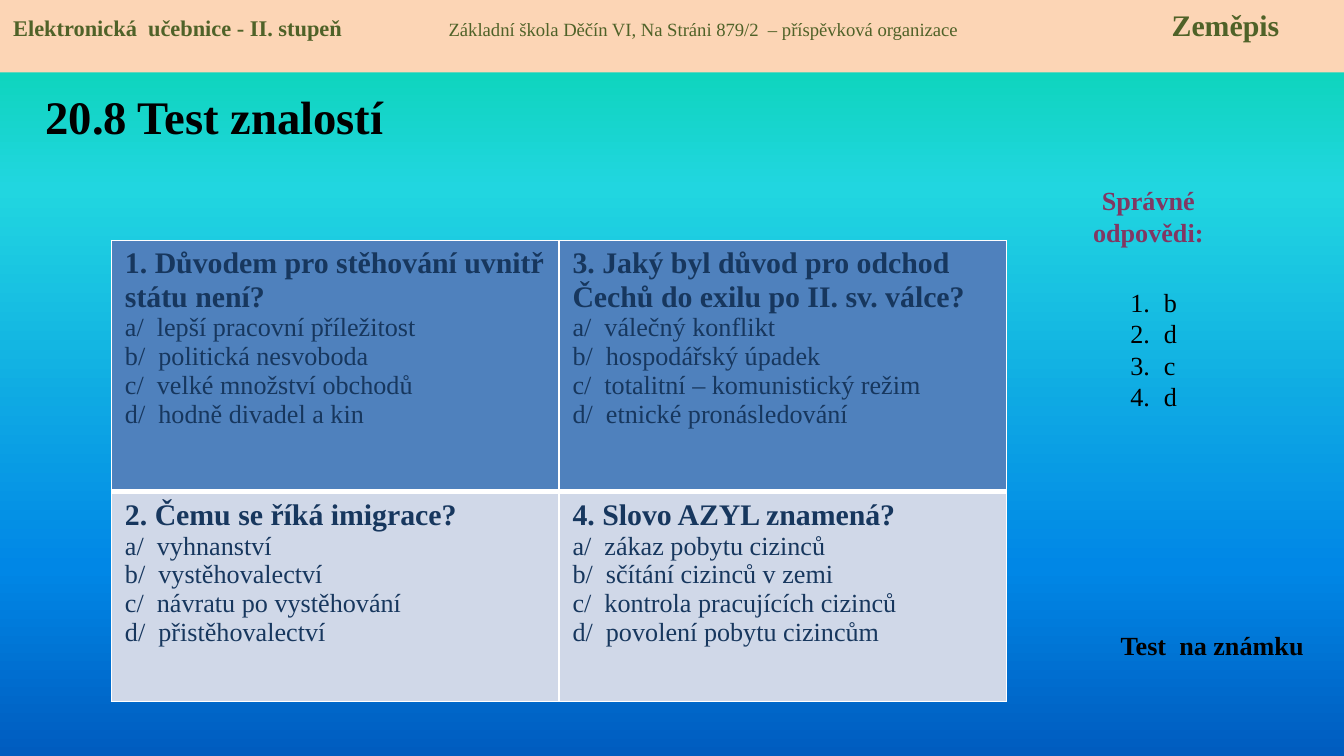
"""Build the geography quiz slide with its answer key."""
import dataclasses
import typing

import lxml.etree
import pptx
import pptx.dml.color
import pptx.enum.shapes
import pptx.enum.text
import pptx.oxml.ns
import pptx.util

Inches = pptx.util.Inches
Pt = pptx.util.Pt
ALIGN = pptx.enum.text.PP_ALIGN
ANCHOR = pptx.enum.text.MSO_ANCHOR
FACE = "Times New Roman"
WIDE = Inches(10)
HUES = {
    "black": "000000", "white": "FFFFFF", "plum": "813763", "navy": "17375E",
    "olive": "4F6228", "peach": "FCD5B5", "blue": "4F81BD", "pale": "D0D8E8",
}
SKY = {0: "03D4A8", 25: "21D6E0", 75: "0087E6", 100: "005CBF"}
FRAME = {"word_wrap": True, "vertical_anchor": ANCHOR.TOP,
         "auto_size": pptx.enum.text.MSO_AUTO_SIZE.NONE}


@dataclasses.dataclass
class Span:
    text: str
    size: float
    hue: str = "black"
    bold: bool = True


@dataclasses.dataclass
class Quiz:
    ask: tuple[str, ...]
    picks: tuple[str, ...]


@dataclasses.dataclass
class Label:
    text: str
    box: tuple[float, float, float, float]
    hue: str
    align: ALIGN


QUIZ = [
    [Quiz(("1. Důvodem pro stěhování uvnitř státu není?",),
          ("lepší pracovní příležitost", "politická nesvoboda",
           "velké množství obchodů", "hodně divadel a kin")),
     Quiz(("3. Jaký byl důvod pro odchod", "Čechů do exilu po II. sv. válce?"),
          ("válečný konflikt", "hospodářský úpadek",
           "totalitní – komunistický režim", "etnické pronásledování"))],
    [Quiz(("2. Čemu se říká imigrace?",),
          ("vyhnanství", "vystěhovalectví",
           "návratu po vystěhování", "přistěhovalectví")),
     Quiz(("4. Slovo AZYL znamená?",),
          ("zákaz pobytu cizinců", "sčítání cizinců v zemi",
           "kontrola pracujících cizinců", "povolení pobytu cizincům"))],
]
ROWS = [("blue", 1.87, 1, 3), ("pale", 1.56, 3, 1)]
LABELS = [
    Label("Správné odpovědi:", (7.76, 1.32, 1.57, 0.57), "plum", ALIGN.CENTER),
    Label("Test  na známku", (8.24, 4.63, 1.57, 0.34), "black", ALIGN.LEFT),
]
HEAD = [
    Span("Elektronická  učebnice - II. stupeň\t", 12, "olive"),
    Span("Základní škola Děčín VI, Na Stráni 879/2  – příspěvková organizace\t",
         10, "olive", False),
    Span("Zeměpis", 16, "olive"),
]


def style(item: typing.Any, **vals: typing.Any) -> None:
    for key, val in vals.items():
        setattr(item, key, val)


def tint(name: str) -> pptx.dml.color.RGBColor:
    return pptx.dml.color.RGBColor.from_string(HUES[name])


def node(base: typing.Any, tag: str, **vals: typing.Any) -> typing.Any:
    return lxml.etree.SubElement(base, pptx.oxml.ns.qn(tag),
                                 {key: str(val) for key, val in vals.items()})


def place(shape: typing.Any, *box: float) -> None:
    sides = ("left", "top", "width", "height")
    style(shape, **dict(zip(sides, map(Inches, box))))


def write(frame: typing.Any, lines: list[list[Span]], **vals: typing.Any) -> None:
    for num, line in enumerate(lines):
        para = frame.add_paragraph() if num else frame.paragraphs[0]
        style(para, **vals)
        for span in line:
            run = para.add_run()
            run.text = span.text
            style(run.font, name=FACE, size=Pt(span.size), bold=span.bold)
            run.font.color.rgb = tint(span.hue)


def paint(slide: typing.Any) -> None:
    fill = slide.background.fill
    fill.gradient()
    fill.gradient_angle = 270
    stops = next(slide.element.iter(pptx.oxml.ns.qn("a:gsLst")))
    for stop in list(stops):
        stops.remove(stop)
    for spot, hue in SKY.items():
        node(node(stops, "a:gs", pos=spot * 1000), "a:srgbClr", val=hue)


def edge(cell: typing.Any, top: int, base: int) -> None:
    props = cell._tc.get_or_add_tcPr()
    for side, wide in {"L": 1, "R": 1, "T": top, "B": base}.items():
        line = node(props, f"a:ln{side}", w=Pt(wide))
        node(node(line, "a:solidFill"), "a:srgbClr", val=HUES["white"])


def draw_quiz(slide: typing.Any) -> None:
    box = map(Inches, (0.83, 1.79, 6.66, 3.43))
    table = slide.shapes.add_table(2, 2, *box).table
    for num, (hue, tall, top, base) in enumerate(ROWS):
        table.rows[num].height = Inches(tall)
        for cell, quiz in zip(table.rows[num].cells, QUIZ[num]):
            edge(cell, top, base)
            cell.fill.solid()
            cell.fill.fore_color.rgb = tint(hue)
            lines = [[Span(text, 16, "navy")] for text in quiz.ask]
            lines += [[Span(f"{mark}/  {text}", 14, "navy", False)]
                      for mark, text in zip("abcd", quiz.picks)]
            write(cell.text_frame, lines)


def draw_key(body: typing.Any) -> None:
    place(body, 8.31, 1.88, 0.55, 1.45)
    frame = body.text_frame
    style(frame, **FRAME, margin_top=Inches(0.25))
    write(frame, [[Span(mark, 14, bold=False)] for mark in "bdcd"],
          space_before=Pt(0), line_spacing=Pt(16.8))
    for para in frame.paragraphs:
        props = para._p.get_or_add_pPr()
        for key, val in {"marL": 0.25, "indent": -0.25}.items():
            props.set(key, str(Inches(val)))
        node(props, "a:buFont", typeface=FACE)
        node(props, "a:buAutoNum", type="arabicPeriod")


def draw_label(slide: typing.Any, label: Label) -> None:
    frame = slide.shapes.add_textbox(*map(Inches, label.box)).text_frame
    style(frame, **FRAME)
    write(frame, [[Span(label.text, 14, label.hue)]],
          alignment=label.align, line_spacing=Pt(17))


def draw_head(slide: typing.Any) -> None:
    kind = pptx.enum.shapes.MSO_SHAPE.RECTANGLE
    bar = slide.shapes.add_shape(kind, *map(Inches, (0, 0, 10, 0.54)))
    bar.shadow.inherit = False
    bar.fill.solid()
    bar.fill.fore_color.rgb = tint("peach")
    bar.line.fill.background()
    style(bar.text_frame, **FRAME)
    write(bar.text_frame, [HEAD], alignment=ALIGN.LEFT)
    tabs = node(bar.text_frame.paragraphs[0]._p.get_or_add_pPr(), "a:tabLst")
    for spot in (3.24, 8.62):
        node(tabs, "a:tab", pos=Inches(spot), algn="l")


def main() -> None:
    deck = pptx.Presentation()
    style(deck, slide_width=WIDE, slide_height=WIDE * 9 // 16)
    slide = deck.slides.add_slide(deck.slide_layouts[1])
    paint(slide)
    title, body = slide.placeholders
    place(title, 0, 0.54, 3.19, 0.65)
    style(title.text_frame, **{**FRAME, "vertical_anchor": ANCHOR.MIDDLE})
    write(title.text_frame, [[Span("20.8 Test znalostí", 25)]],
          alignment=ALIGN.CENTER)
    draw_quiz(slide)
    draw_key(body)
    for label in LABELS:
        draw_label(slide, label)
    draw_head(slide)
    deck.save("out.pptx")


if __name__ == "__main__":
    main()
